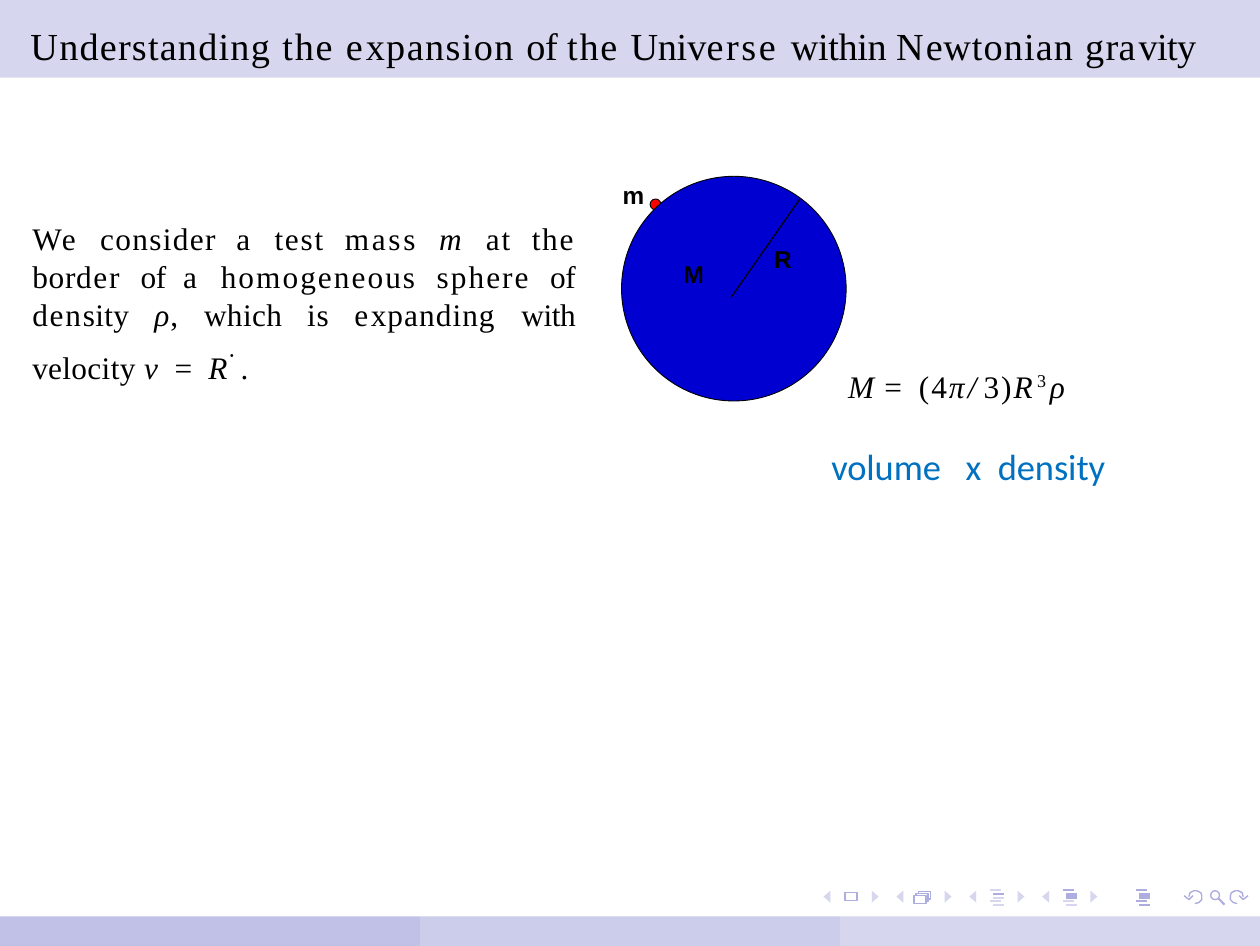
from lxml.etree import SubElement
from pptx import Presentation
from pptx.dml.color import RGBColor
from pptx.enum.shapes import MSO_CONNECTOR, MSO_SHAPE
from pptx.enum.text import PP_ALIGN
from pptx.oxml.ns import qn
from pptx.util import Cm, Pt

PALE, MID, DEEP, ICON = "D6D6EF", "CCCCEB", "C1C1E8", "ADADE0"
SERIF = "Times New Roman"
WIDE, HIGH = 12.79, 9.6

deck = Presentation()
deck.slide_width, deck.slide_height = Cm(WIDE), Cm(HIGH)
slide = deck.slides.add_slide(deck.slide_layouts[6])
shapes = slide.shapes


def paint(shape, fill=None, line=None, width=0.4):
    """Give a shape or connector its colours and no shadow."""
    if hasattr(shape, "fill"):
        shape.shadow.inherit = False
        if fill:
            shape.fill.solid()
            shape.fill.fore_color.rgb = RGBColor.from_string(fill)
        else:
            shape.fill.background()
    else:
        SubElement(shape._element.spPr, qn("a:effectLst"))
    if line:
        shape.line.color.rgb = RGBColor.from_string(line)
        shape.line.width = Pt(width)
    else:
        shape.line.fill.background()


def write(box, runs, size, font=SERIF, color="000000", wrap=False):
    """Add text from (text, spacing in points, style) runs."""
    frame = shapes.add_textbox(*map(Cm, box)).text_frame
    frame.margin_left = frame.margin_right = 0
    frame.margin_top = frame.margin_bottom = 0
    frame.word_wrap = wrap
    para = frame.paragraphs[0]
    for text, gap, *style in runs:
        run = para.add_run()
        run.text = text
        run.font.name, run.font.size = font, Pt(size)
        run.font.color.rgb = RGBColor.from_string(color)
        run.font.bold, run.font.italic = "b" in style, "i" in style
        props = run._r.get_or_add_rPr()
        props.set("spc", str(round(gap * 100)))
        if "dot" in style:
            run.font.size = Pt(13.5)
            props.set("baseline", "15000")
        if "sup" in style:
            props.set("baseline", "37000")
    return para


# Header and footer bars
bars = [(0, 0, WIDE, 0.79, PALE)]
third = WIDE / 3
bars += [(n * third, 9.3, third, 0.3, tint) for n, tint in enumerate((DEEP, MID, PALE))]
for *box, tint in bars:
    paint(shapes.add_shape(MSO_SHAPE.RECTANGLE, *map(Cm, box)), tint)

# Navigation outlines: (points, closed, fill, line)
paths = []
STEP = 0.74
for n in range(4):
    for tip, base in ((8.36, 8.43), (8.92, 8.85)):
        x, tail = tip + n * STEP, base + n * STEP
        paths.append(([(tail, 9.04), (x, 9.1), (tail, 9.16)], True, PALE, None))
for n in range(2):
    d = 0.025 * n
    stack = [(9.3, 9.09), (9.3, 9.07), (9.42, 9.07), (9.42, 9.15), (9.4, 9.15)]
    paths.append(([(x + d, y - d) for x, y in stack], False, None, ICON))
curl = [(12.13, 9.17), (12.17, 9.16), (12.2, 9.13), (12.2, 9.09), (12.19, 9.06),
        (12.15, 9.04), (12.12, 9.04), (12.08, 9.06), (12.07, 9.1)]
barb = [(12.11, 9.09), (12.07, 9.13), (12.02, 9.09)]
for arc in (curl, barb):
    paths.append((arc, False, None, ICON))
    paths.append(([(24.69 - x, y) for x, y in arc], False, None, ICON))
for points, closed, fill, line in paths:
    points = [(Cm(x), Cm(y)) for x, y in points]
    pen = shapes.build_freeform(*points[0])
    pen.add_line_segments(points[1:], close=closed)
    paint(pen.convert_to_shape(), fill, line)

# Frame icons, lens, test mass and sphere
for kind, box, fill, line, width in (
    (MSO_SHAPE.RECTANGLE, (8.58, 9.06, 0.12, 0.08), None, ICON, 0.4),
    (MSO_SHAPE.RECTANGLE, (9.28, 9.09, 0.12, 0.08), None, ICON, 0.4),
    (MSO_SHAPE.OVAL, (12.29, 9.04, 0.09, 0.09), None, ICON, 0.4),
    (MSO_SHAPE.OVAL, (6.6, 2.02, 0.11, 0.11), "FF0000", "000000", 0.25),
    (MSO_SHAPE.OVAL, (6.31, 1.79, 2.28, 2.28), "0000D1", "000000", 0.25),
):
    paint(shapes.add_shape(kind, *map(Cm, box)), fill, line, width)

# Radius, lens handle and list icons
lines = [(7.42, 3.02, 8.12, 2.02, "000000", 0.35),
         (12.37, 9.12, 12.43, 9.18, ICON, 0.6)]
first = [(0, 9.03, PALE, 0.6), (0.03, 9.07, ICON, 0.6), (0.03, 9.11, PALE, 0.6),
         (0, 9.14, PALE, 0.6), (0.03, 9.18, PALE, 0.6)]
lists = [(10.05, first)]
for left, tint in ((10.79, PALE), (11.53, ICON)):
    lists.append((left, [(0, 9.03, ICON, 0.6), (0.03, 9.09, ICON, 1.6),
                         (0, 9.14, tint, 0.6), (0.03, 9.18, tint, 0.6)]))
for left, rows in lists:
    for dent, y, tint, width in rows:
        lines.append((left + dent, y, left + dent + 0.11, y, tint, width))
for *ends, tint, width in lines:
    paint(shapes.add_connector(MSO_CONNECTOR.STRAIGHT, *map(Cm, ends)), None, tint, width)

# Title
write((0.31, 0.23, 12.25, 0.46), [
    ("Understanding ", 0.35), ("the ", 0.5), ("e", 0.8), ("xpansion ", 0.4),
    ("of ", -0.1), ("the ", 0.5), ("Uni", -0.1), ("v", -0.4), ("erse ", 0.75),
    ("within ", -0.1), ("N", 0.6), ("e", 0.1), ("wtonian ", 0.3), ("g", 0.4),
    ("r", -0.2), ("a", 0.9), ("vity", -0.2)], 11)

# Explanation
para = write((0.33, 2.22, 5.51, 1.7), [
    ("W", -0.4), ("e ", 0.9), ("consider ", 0.4), ("a ", 0.9), ("test ", 0.5),
    ("mass ", 0.8), ("m ", 0.9, "i"), ("at the ", 0.5), ("bor", 0.2), ("der ", 0.5),
    ("of ", -0.1), ("a ", 0.9), ("homogeneous sphere ", 0.6), ("of ", -0.1),
    ("den", 0.5), ("sity ", 0.1), ("ρ", 0.3, "i"), (", ", 0.2), ("which ", 0.1),
    ("is ", 0.2), ("e", 0.7), ("xpanding ", 0.3), ("with ", -0.1), ("v", -0.3),
    ("elocity ", 0.1), ("v", 0.5, "i"), (" ", 2), ("= ", 1.2), ("R", -3.4, "i"),
    ("˙ ", -0.7, "dot"), (".", 0.2)], 9, wrap=True)
para.alignment = PP_ALIGN.JUSTIFY
para.line_spacing = 1.01

# Sphere labels
for label, left, top in (("m", 6.32, 1.83), ("M", 6.94, 2.63), ("R", 7.86, 2.48)):
    write((left, top, 0.3, 0.33), [(label, 0.2, "b")], 7, "Arial")

# Mass formula and its reading
write((8.61, 3.73, 2.31, 0.46), [
    ("M ", 0.35, "i"), ("= ", 1.3), ("(", 0.6), ("4", 0.5), ("π", 1, "i"),
    ("/", 2, "i"), ("3", 0.5), (")", 0.6), ("R", 1.3, "i"), ("3", 1.1, "sup"),
    ("ρ", 0.3, "i")], 9)
write((8.44, 4.51, 2.82, 0.46), [
    ("volume", 0), (" ", 4.75), ("x", 0), (" ", 2.37), ("density", 0)],
    10.5, "Calibri", "0070C0")

deck.save("out.pptx")
